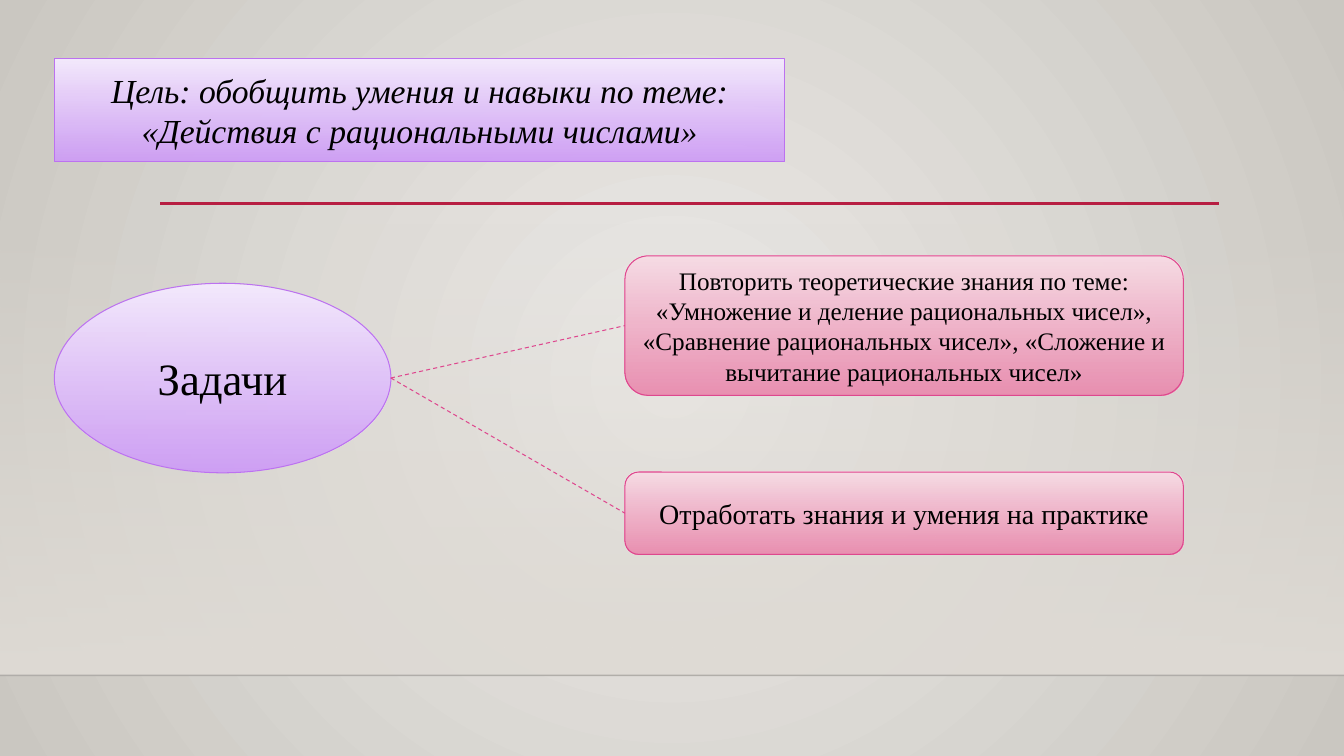
import pptx
import pptx.util
from dataclasses import dataclass
from lxml import etree
from pptx.dml.color import RGBColor
from pptx.enum.dml import MSO_LINE
from pptx.enum.shapes import MSO_CONNECTOR, MSO_SHAPE
from pptx.enum.text import MSO_ANCHOR, PP_ALIGN
from pptx.oxml.ns import qn

Pt = pptx.util.Pt


@dataclass(frozen=True)
class Theme:
    font: str = "Times New Roman"
    text: str = "000000"
    backdrop: tuple = (("ECEAE7", 100), ("CAC7C1", 100))
    wall: tuple = (("DFDBD5", 0), ("DFDBD5", 100))
    violet: tuple = (("F4EAFD", 100), ("CE9CF7", 92))
    violet_line: str = "BC72F0"
    pink: tuple = (("F7DCE5", 100), ("EA8AAE", 92))
    pink_line: str = "DE478E"
    rule: str = "B71E42"
    floor: str = "000001"
    goal_size: int = 24
    hub_size: int = 32
    long_task_size: int = 18
    short_task_size: int = 20
    thin: float = 0.75


T = Theme()


def set_alpha(clr, percent):
    if percent < 100:
        etree.SubElement(clr, qn("a:alpha"), val=str(percent * 1000))


def paint_gradient(fill, element, stops):
    """Top-to-bottom gradient; stops are (colour, opacity) pairs."""
    fill.gradient()
    fill.gradient_angle = 270
    for stop, (colour, _) in zip(fill.gradient_stops, stops):
        stop.color.rgb = RGBColor.from_string(colour)
    for clr, (_, opacity) in zip(element.xpath(".//a:gradFill//a:srgbClr"), stops):
        set_alpha(clr, opacity)


def paint_background(s):
    paint_gradient(s.background.fill, s._element, T.backdrop)
    grad = s._element.xpath(".//p:bgPr/a:gradFill")[0]
    grad.remove(grad.find(qn("a:lin")))
    path = etree.SubElement(grad, qn("a:path"))
    path.set("path", "circle")
    etree.SubElement(path, qn("a:fillToRect"),
                     {side: "50000" for side in "ltrb"})


def add_block(s, kind, box, stops, line=None):
    sp = s.shapes.add_shape(kind, *map(Pt, box))
    sp.shadow.inherit = False
    paint_gradient(sp.fill, sp._element, stops)
    if line:
        sp.line.color.rgb = RGBColor.from_string(line)
        sp.line.width = Pt(T.thin)
    else:
        sp.line.fill.background()
    return sp


def add_label(sp, text, size, italic=False):
    tf = sp.text_frame
    tf.word_wrap = True
    tf.vertical_anchor = MSO_ANCHOR.MIDDLE
    p = tf.paragraphs[0]
    p.text = text
    p.alignment = PP_ALIGN.CENTER
    p.font.name = T.font
    p.font.size = Pt(size)
    p.font.italic = italic
    p.font.color.rgb = RGBColor.from_string(T.text)


def add_line(s, ends, colour, width, opacity=100, dash=None):
    cn = s.shapes.add_connector(MSO_CONNECTOR.STRAIGHT, *map(Pt, ends))
    cn.line.color.rgb = RGBColor.from_string(colour)
    cn.line.width = Pt(width)
    if dash:
        cn.line.dash_style = dash
    set_alpha(cn._element.xpath(".//a:ln//a:srgbClr")[0], opacity)
    etree.SubElement(cn._element.spPr, qn("a:effectLst"))


def main():
    prs = pptx.Presentation()
    prs.slide_width, prs.slide_height = Pt(960), Pt(540)
    s = prs.slides.add_slide(prs.slide_layouts[6])

    # Backdrop: wall, floor edge and title rule
    paint_background(s)
    add_block(s, MSO_SHAPE.RECTANGLE, (0, 159, 960, 323.4), T.wall)
    add_line(s, (0, 482.4, 960, 482.4), T.floor, 1, opacity=20)
    add_line(s, (114.4, 145.2, 871, 145.2), T.rule, 2.5)

    # Goal and the hub of tasks
    goal = add_block(s, MSO_SHAPE.RECTANGLE, (38.8, 41.6, 521.8, 73.6),
                     T.violet, T.violet_line)
    add_label(goal, "Цель: обобщить умения и навыки по теме: "
              "«Действия с рациональными числами»", T.goal_size, italic=True)
    hub = add_block(s, MSO_SHAPE.OVAL, (38.8, 202.3, 240.4, 135.4),
                    T.violet, T.violet_line)
    add_label(hub, "Задачи", T.hub_size)

    # Tasks, each joined to the hub
    tasks = (
        (182.8, 99.6, T.long_task_size,
         "Повторить теоретические знания по теме: «Умножение и деление "
         "рациональных чисел», «Сравнение рациональных чисел», "
         "«Сложение и вычитание рациональных чисел»"),
        (337.2, 58.8, T.short_task_size,
         "Отработать знания и умения на практике"),
    )
    for top, height, size, text in tasks:
        task = add_block(s, MSO_SHAPE.ROUNDED_RECTANGLE,
                         (446.4, top, 398.8, height), T.pink, T.pink_line)
        add_label(task, text, size)
        add_line(s, (279.2, 270, 446.4, top + height / 2),
                 T.pink_line, T.thin, dash=MSO_LINE.DASH)

    prs.save("out.pptx")


if __name__ == "__main__":
    main()
